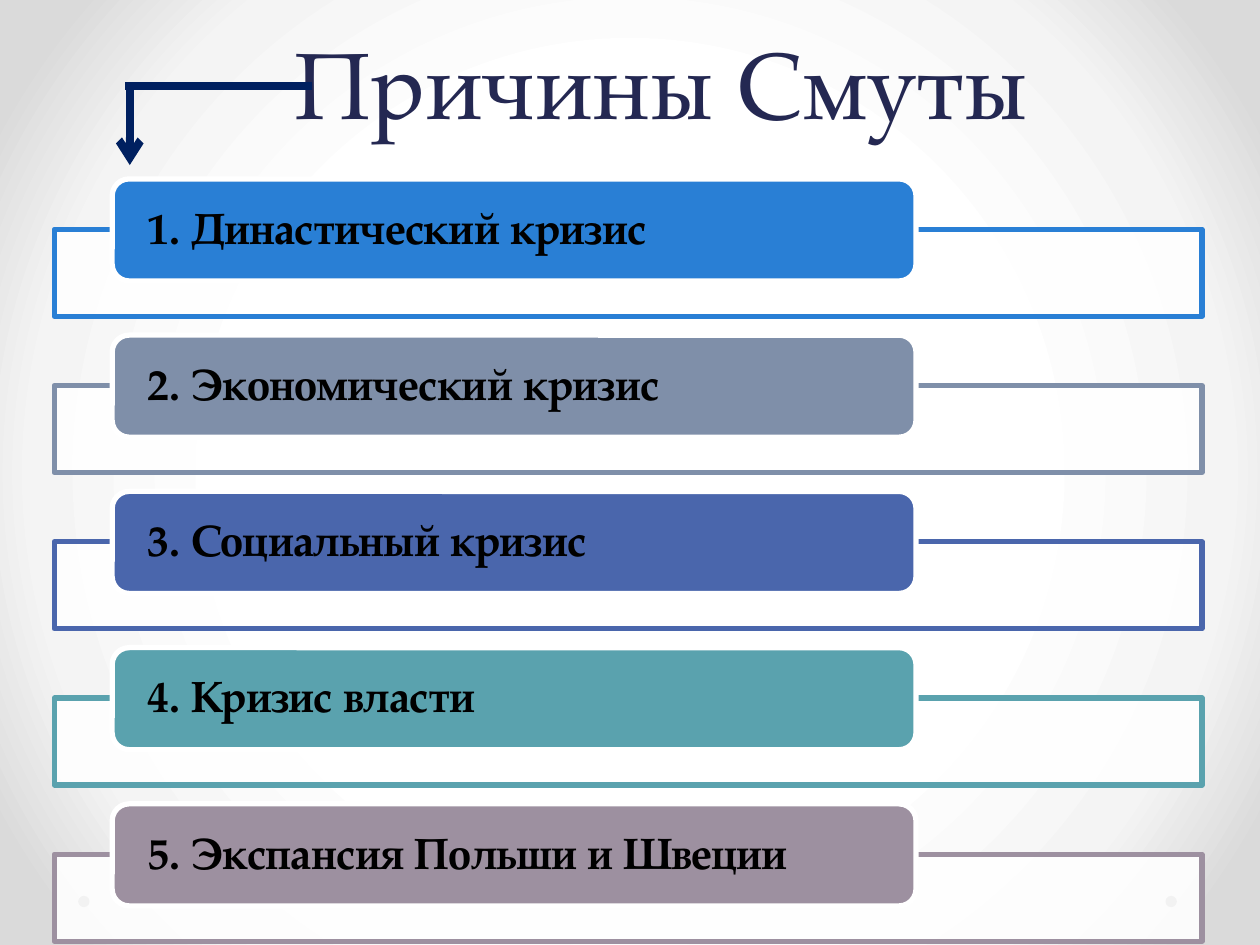
from dataclasses import dataclass

from lxml import etree
from pptx import Presentation
from pptx.dml.color import RGBColor
from pptx.enum.shapes import MSO_CONNECTOR, MSO_SHAPE
from pptx.enum.text import MSO_ANCHOR, MSO_AUTO_SIZE, PP_ALIGN
from pptx.oxml.ns import qn
from pptx.util import Inches, Pt

RECT, ROUNDED, OVAL = MSO_SHAPE.RECTANGLE, MSO_SHAPE.ROUNDED_RECTANGLE, MSO_SHAPE.OVAL
STRAIGHT = MSO_CONNECTOR.STRAIGHT
MIDDLE = MSO_ANCHOR.MIDDLE
LEFT, CENTER = PP_ALIGN.LEFT, PP_ALIGN.CENTER
NO_FIT = MSO_AUTO_SIZE.NONE


@dataclass(frozen=True)
class Theme:
    font: str = "TeX Gyre Pagella"
    title_size: float = 54
    label_size: float = 25
    title: str = "242852"
    text: str = "000000"
    white: str = "FFFFFF"
    dot: str = "808080"
    arrow: str = "002060"
    backdrop: tuple = ((50, "FFFFFF"), (76, "F4F4F4"), (92, "DADADA"))


THEME = Theme()
SLIDE_W, SLIDE_H = 10, 7.5
ROW_TOP, ROW_PITCH = 1.42, 1.24
FRAME_OFFSET = 0.4
CAUSES = (
    ("1. Династический кризис", "297FD5"),
    ("2. Экономический кризис", "7F8FA9"),
    ("3. Социальный кризис", "4A66AC"),
    ("4. Кризис власти", "5AA2AE"),
    ("5. Экспансия Польши и Швеции", "9D90A0"),
)


def rgb(color):
    return RGBColor.from_string(color)


def set_backdrop(slide):
    fill = slide.background.fill
    fill.gradient()
    grad = slide.background._cSld.find(".//" + qn("a:gradFill"))
    for child in list(grad):
        grad.remove(child)
    stops = etree.SubElement(grad, qn("a:gsLst"))
    for pos, color in THEME.backdrop:
        stop = etree.SubElement(stops, qn("a:gs"), pos=str(pos * 1000))
        etree.SubElement(stop, qn("a:srgbClr"), val=color)
    circle = etree.SubElement(grad, qn("a:path"), path="circle")
    etree.SubElement(circle, qn("a:fillToRect"), l="50000", t="50000", r="50000", b="50000")


def write(sp, text, *, size, color, align=LEFT, bold=False, spacing=None, inset=0.1):
    tf = sp.text_frame
    tf.word_wrap = True
    tf.auto_size = NO_FIT
    tf.vertical_anchor = MIDDLE
    tf.margin_left = tf.margin_right = Inches(inset)
    tf.margin_top = tf.margin_bottom = 0
    p = tf.paragraphs[0]
    p.alignment = align
    p.line_spacing = spacing
    r = p.add_run()
    r.text = text
    r.font.name = THEME.font
    r.font.size = Pt(size)
    r.font.bold = bold
    r.font.color.rgb = rgb(color)


def add_box(slide, kind, box, fill, line=None, opacity=100):
    sp = slide.shapes.add_shape(kind, *map(Inches, box))
    sp.shadow.inherit = False
    sp.fill.solid()
    sp.fill.fore_color.rgb = rgb(fill)
    if opacity < 100:
        color = sp.fill._xPr.find(".//" + qn("a:srgbClr"))
        etree.SubElement(color, qn("a:alpha"), val=str(opacity * 1000))
    if line:
        sp.line.color.rgb = rgb(line)
        sp.line.width = Pt(3)
    else:
        sp.line.fill.background()
    return sp


def add_line(slide, start, end, head=False):
    cx = slide.shapes.add_connector(STRAIGHT, *map(Inches, start + end))
    cx.line.color.rgb = rgb(THEME.arrow)
    cx.line.width = Pt(4.5)
    if head:
        etree.SubElement(cx.line._get_or_add_ln(), qn("a:tailEnd"), type="arrow")
    etree.SubElement(cx._element.spPr, qn("a:effectLst"))


def add_title(slide, text):
    sp = slide.shapes.title
    sp.left, sp.top, sp.width, sp.height = map(Inches, (0.99, 0, 8.51, 1.39))
    write(sp, text, size=THEME.title_size, color=THEME.title, align=CENTER, spacing=Pt(58))


def add_cause(slide, row, text, color):
    top = ROW_TOP + row * ROW_PITCH
    add_box(slide, RECT, (0.43, top + FRAME_OFFSET, 9.11, 0.69), THEME.white, color, opacity=90)
    label = add_box(slide, ROUNDED, (0.89, top, 6.38, 0.81), color, THEME.white)
    write(label, text, size=THEME.label_size, color=THEME.text, bold=True, spacing=0.9, inset=0.24)


def main():
    prs = Presentation()
    prs.slide_width, prs.slide_height = Inches(SLIDE_W), Inches(SLIDE_H)
    slide = prs.slides.add_slide(prs.slide_layouts[5])
    set_backdrop(slide)
    for left in (9.25, 0.62):
        add_box(slide, OVAL, (left, 7.11, 0.09, 0.09), THEME.dot)
    add_title(slide, "Причины Смуты")
    for row, (text, color) in enumerate(CAUSES):
        add_cause(slide, row, text, color)
    add_line(slide, (2.48, 0.68), (0.99, 0.68))
    add_line(slide, (1.03, 0.68), (1.03, 1.31), head=True)
    prs.save("out.pptx")


if __name__ == "__main__":
    main()
